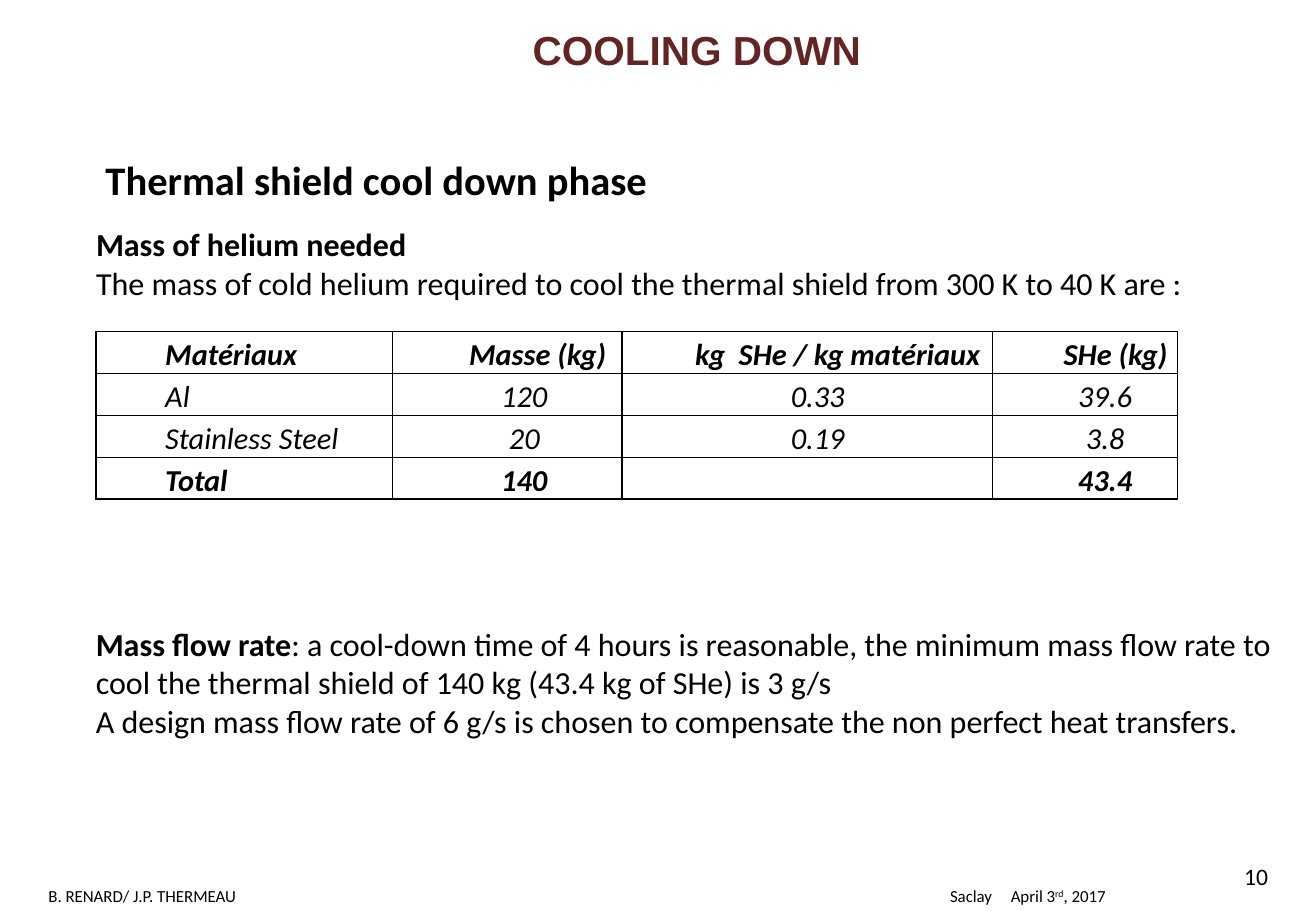
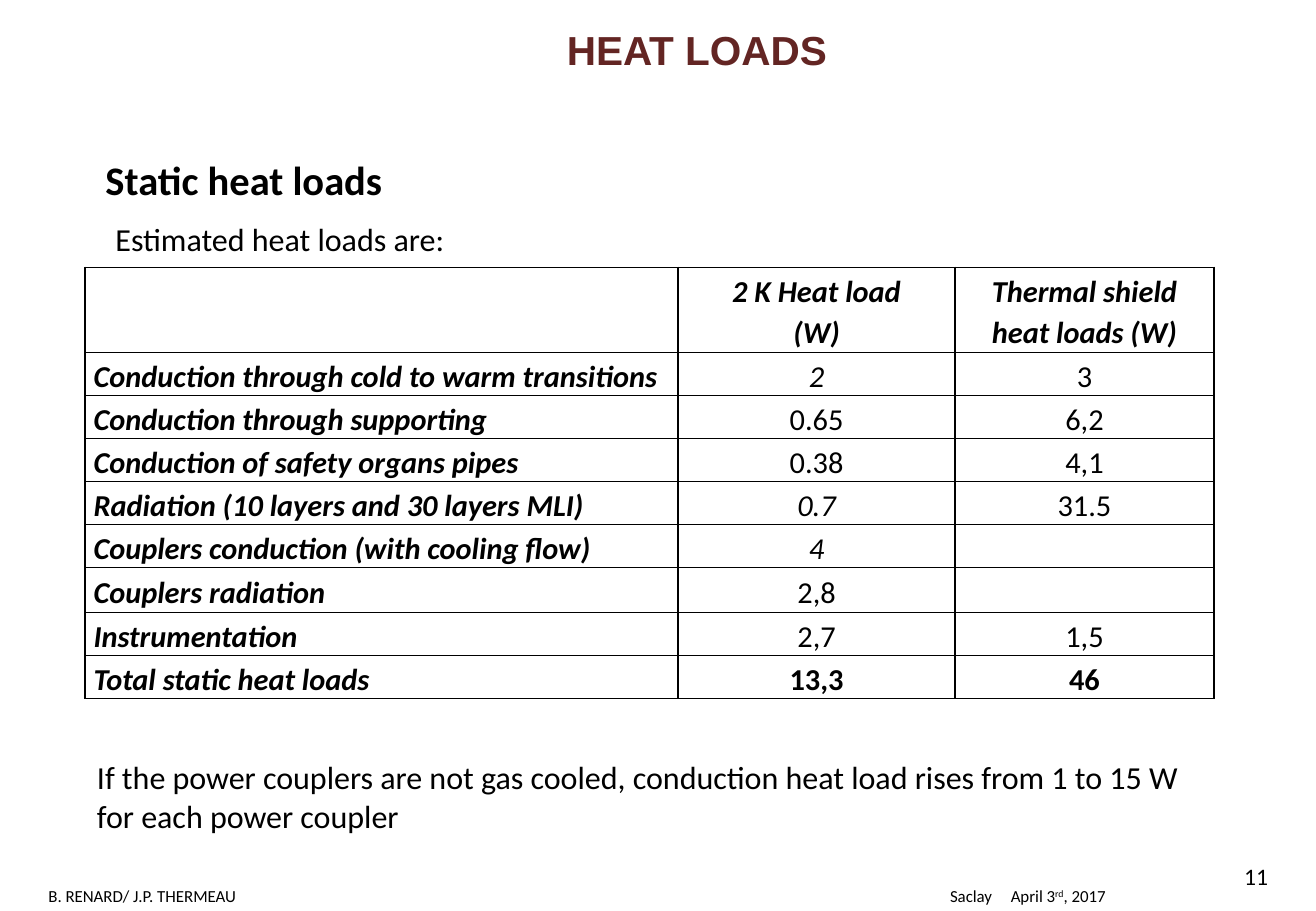
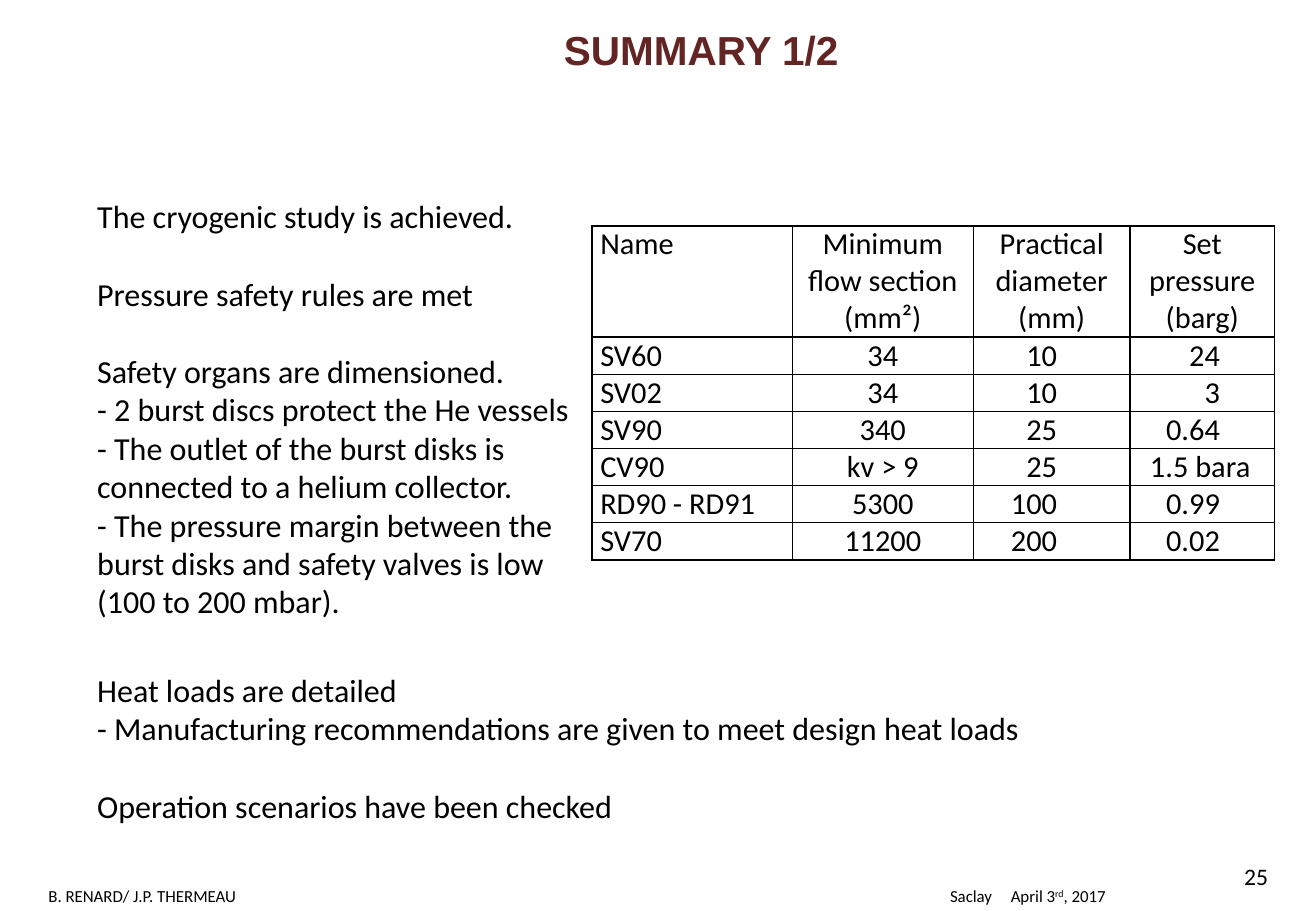
from dataclasses import dataclass
from typing import Any, Optional

from lxml import etree
from pptx import Presentation
from pptx.dml.color import RGBColor
from pptx.enum.text import MSO_ANCHOR, MSO_AUTO_SIZE, PP_ALIGN
from pptx.oxml.ns import qn
from pptx.util import Emu, Pt

LEFT, CENTER, RIGHT = PP_ALIGN.LEFT, PP_ALIGN.CENTER, PP_ALIGN.RIGHT
TOP, MIDDLE = MSO_ANCHOR.TOP, MSO_ANCHOR.MIDDLE
NO_AUTOFIT = MSO_AUTO_SIZE.NONE
EMU_PER_PX = 9144
TITLE_AND_CONTENT = 1


@dataclass(frozen=True)
class Theme:
    title_color: RGBColor = RGBColor(0x63, 0x25, 0x23)
    ink: RGBColor = RGBColor(0, 0, 0)
    panel: RGBColor = RGBColor(0xFF, 0xFF, 0xFF)
    border: str = "000000"
    border_points: int = 1
    title_font: str = "Arial"
    body_font: str = "Calibri"
    heading_size: int = 24
    body_size: int = 19
    table_size: int = 18
    number_size: int = 14
    footer_size: int = 10
    blank_line: int = 23
    table_spacing: float = 1.13


THEME = Theme()


@dataclass(frozen=True)
class Box:
    left: int
    top: int
    width: int
    height: int


@dataclass(frozen=True)
class Span:
    text: str
    bold: bool = False
    italic: bool = False
    raised: bool = False


@dataclass(frozen=True)
class Para:
    spans: tuple[Span, ...]
    gap: int = 0
    align: Any = LEFT
    line_spacing: Optional[float] = None
    tabs: tuple[int, ...] = ()


@dataclass(frozen=True)
class Block:
    box: Box
    paras: tuple[Para, ...]
    size: int = THEME.body_size
    margin_left: int = 10
    filled: bool = False


@dataclass(frozen=True)
class Cell:
    text: str
    bold: bool = False
    italic: bool = False
    align: Any = LEFT
    anchor: Any = TOP
    margin_left: int = 7
    margin_right: int = 7
    margin_top: int = 0


@dataclass(frozen=True)
class Grid:
    left: int
    top: int
    columns: tuple[int, ...]
    heights: tuple[int, ...]
    cells: list[list[Cell]]
    line_spacing: Optional[float] = None


@dataclass(frozen=True)
class Page:
    number: int
    title: str
    body: Block
    blocks: tuple[Block, ...]
    grid: Grid
    title_box: Box = Box(227, 0, 693, 81)


FOOTER = Block(
    Box(30, 724, 940, 26),
    (Para((Span("B. RENARD/ J.P. THERMEAU\tSaclay\tApril 3"),
           Span("rd", raised=True), Span(", 2017")), tabs=(742, 792)),),
    THEME.footer_size,
)


def px(length: int) -> Emu:
    return Emu(length * EMU_PER_PX)


def apply(target: Any, values: dict[str, Any]) -> None:
    for name, value in values.items():
        setattr(target, name, value)


def line(text: str, bold: bool = False, gap: int = 0) -> Para:
    return Para((Span(text, bold),), gap)


def heading(text: str) -> Block:
    return Block(Box(77, 123, 874, 50), (line(text, True),), THEME.heading_size)


def place(shape: Any, box: Box) -> None:
    apply(shape, {"left": px(box.left), "top": px(box.top),
                  "width": px(box.width), "height": px(box.height)})


def write(frame: Any, paras: tuple[Para, ...], size: int,
          font: str = THEME.body_font, color: RGBColor = THEME.ink) -> None:
    for index, para in enumerate(paras):
        target = frame.paragraphs[0] if index == 0 else frame.add_paragraph()
        properties = target._p.get_or_add_pPr()
        apply(target, {"alignment": para.align, "space_before": Pt(para.gap),
                       "space_after": Pt(0), "line_spacing": para.line_spacing})
        if para.tabs:
            stops = etree.SubElement(properties, qn("a:tabLst"))
            for stop in para.tabs:
                etree.SubElement(stops, qn("a:tab"), pos=str(px(stop)), algn="l")
        else:
            properties.set("marL", "0")
            properties.set("indent", "0")
            etree.SubElement(properties, qn("a:buNone"))
        for span in para.spans:
            run = target.add_run()
            run.text = span.text
            apply(run.font, {"name": font, "size": Pt(size),
                             "bold": span.bold, "italic": span.italic})
            run.font.color.rgb = color
            if span.raised:
                run._r.get_or_add_rPr().set("baseline", "30000")


def fill_block(shape: Any, block: Block) -> None:
    place(shape, block.box)
    if block.filled:
        shape.fill.solid()
        shape.fill.fore_color.rgb = THEME.panel
    apply(shape.text_frame, {
        "word_wrap": True, "auto_size": NO_AUTOFIT, "vertical_anchor": TOP,
        "margin_left": px(block.margin_left), "margin_right": px(10),
        "margin_top": px(5), "margin_bottom": px(5)})
    write(shape.text_frame, block.paras, block.size)


def add_block(slide: Any, block: Block) -> None:
    fill_block(slide.shapes.add_textbox(0, 0, 0, 0), block)


def add_borders(cell: Any) -> None:
    properties = cell._tc.get_or_add_tcPr()
    for index, side in enumerate(("lnL", "lnR", "lnT", "lnB")):
        edge = etree.Element(qn(f"a:{side}"), w=str(Pt(THEME.border_points)))
        fill = etree.SubElement(edge, qn("a:solidFill"))
        etree.SubElement(fill, qn("a:srgbClr"), val=THEME.border)
        properties.insert(index, edge)


def add_grid(slide: Any, grid: Grid) -> None:
    table = slide.shapes.add_table(
        len(grid.heights), len(grid.columns), px(grid.left), px(grid.top),
        px(sum(grid.columns)), px(sum(grid.heights))).table
    apply(table, {"first_row": False, "horz_banding": False})
    for column, width in zip(table.columns, grid.columns):
        column.width = px(width)
    for row, height, cells in zip(table.rows, grid.heights, grid.cells):
        row.height = px(height)
        for target, cell in zip(row.cells, cells):
            apply(target, {
                "vertical_anchor": cell.anchor,
                "margin_left": px(cell.margin_left),
                "margin_right": px(cell.margin_right),
                "margin_top": px(cell.margin_top), "margin_bottom": 0})
            target.fill.background()
            add_borders(target)
            paras = tuple(
                Para((Span(text, cell.bold, cell.italic),), align=cell.align,
                     line_spacing=grid.line_spacing)
                for text in cell.text.split("\n"))
            write(target.text_frame, paras, THEME.table_size)


def helium_grid() -> Grid:
    rows = (
        ("Matériaux", "Masse (kg)", "kg  SHe / kg matériaux", "SHe (kg)"),
        ("Al", "120", "0.33", "39.6"),
        ("Stainless Steel", "20", "0.19", "3.8"),
        ("Total", "140", "", "43.4"),
    )
    value_margins = (7, 29, 40, 24)
    cells = [[Cell(text, bold=r in (0, len(rows) - 1), italic=True,
                   align=CENTER if c else LEFT, anchor=MIDDLE, margin_left=57,
                   margin_right=value_margins[c] if r else 7)
              for c, text in enumerate(row)] for r, row in enumerate(rows)]
    return Grid(79, 273, (244, 189, 305, 152), (34,) * len(rows), cells,
                THEME.table_spacing)


def heat_grid() -> Grid:
    rows = (
        ("", "2 K Heat load\n(W)", "Thermal shield heat loads (W)"),
        ("Conduction through cold to warm transitions", "2", "3"),
        ("Conduction through supporting", "0.65", "6,2"),
        ("Conduction of safety organs pipes", "0.38", "4,1"),
        ("Radiation (10 layers and 30 layers MLI)", "0.7", "31.5"),
        ("Couplers conduction (with cooling flow)", "4", ""),
        ("Couplers radiation", "2,8", ""),
        ("Instrumentation", "2,7", "1,5"),
        ("Total static heat loads", "13,3", "46"),
    )
    italic_values = ("2", "0.7", "4")
    cells = [[Cell(text, bold=c == 0 or r in (0, len(rows) - 1),
                   italic=c == 0 or r == 0 or text in italic_values,
                   align=CENTER if c else LEFT, anchor=MIDDLE if r else TOP,
                   margin_top=1)
              for c, text in enumerate(row)] for r, row in enumerate(rows)]
    heights = (70,) + (35,) * 5 + (37,) + (35,) * 2
    return Grid(70, 220, (488, 228, 213), heights, cells, THEME.table_spacing)


def valve_grid() -> Grid:
    rows = (
        ("Name", "Minimum flow section (mm²)", "Practical diameter (mm)",
         "Set pressure\n(barg)"),
        ("SV60", "34", "10", "24"),
        ("SV02", "34", "10", "3"),
        ("SV90", "340", "25", "0.64"),
        ("CV90", "kv > 9", "25", "1.5 bara"),
        ("RD90 - RD91", "5300", "100", "0.99"),
        ("SV70", "11200", "200", "0.02"),
    )
    value_aligns = (LEFT, CENTER, RIGHT, RIGHT)
    value_margins = (7, 7, 60, 45)
    cells = [[Cell(text, align=CENTER if c else LEFT)
              for c, text in enumerate(rows[0])]]
    for row in rows[1:]:
        cells.append([
            Cell(text, align=align,
                 margin_right=20 if text.endswith("bara") else margin)
            for text, align, margin in zip(row, value_aligns, value_margins)])
    return Grid(487, 186, (165, 149, 129, 119), (91,) + (30,) * 6, cells)


def build_pages() -> tuple[Page, ...]:
    blank = THEME.blank_line
    return (
        Page(
            10, "COOLING DOWN",
            Block(Box(69, 180, 945, 74), (
                line("Mass of helium needed", True),
                line("The mass of cold helium required to cool the thermal "
                     "shield from 300 K to 40 K are :"))),
            (heading("Thermal shield cool down phase"),
             Block(Box(69, 509, 991, 106), (
                 Para((Span("Mass flow rate", True),
                       Span(": a cool-down time of 4 hours is reasonable, the "
                            "minimum mass flow rate to cool the thermal shield "
                            "of 140 kg (43.4 kg of SHe) is 3 g/s"))),
                 line("A design mass flow rate of 6 g/s is chosen to compensate "
                      "the non perfect heat transfers.")))),
            helium_grid()),
        Page(
            11, "HEAT LOADS",
            Block(Box(85, 176, 945, 42), (line("Estimated heat loads are:"),)),
            (heading("Static heat loads"),
             Block(Box(70, 619, 937, 74), (
                 line("If the power couplers are not gas cooled, conduction heat "
                      "load rises from 1 to 15 W for each power coupler"),))),
            heat_grid()),
        Page(
            25, "SUMMARY 1/2",
            Block(Box(61, 157, 425, 362), (
                line("The cryogenic study is achieved."),
                line("Pressure safety rules are met", gap=blank),
                line("Safety organs are dimensioned.", gap=blank),
                line("- 2 burst discs protect the He vessels"),
                line("- The outlet of the burst disks is connected to a helium "
                     "collector."),
                line("- The pressure margin between the burst disks and safety "
                     "valves is low (100 to 200 mbar).")),
                margin_left=19, filled=True),
            (Block(Box(61, 547, 974, 138), (
                line("Heat loads are detailed"),
                line("- Manufacturing recommendations are given to meet design "
                     "heat loads"),
                line("Operation scenarios have been checked", gap=blank)),
                margin_left=19, filled=True),),
            valve_grid(), Box(195, 0, 764, 81)),
    )


def draw_page(deck: Any, page: Page) -> None:
    slide = deck.slides.add_slide(deck.slide_layouts[TITLE_AND_CONTENT])
    title = slide.shapes.title
    place(title, page.title_box)
    apply(title.text_frame, {"auto_size": NO_AUTOFIT, "vertical_anchor": MIDDLE})
    write(title.text_frame, (Para((Span(page.title, True),), align=CENTER),),
          THEME.heading_size, THEME.title_font, THEME.title_color)
    fill_block(slide.placeholders[1], page.body)
    number = Block(Box(1014, 705, 55, 34), (line(str(page.number)),),
                   THEME.number_size)
    for block in (*page.blocks, FOOTER, number):
        add_block(slide, block)
    add_grid(slide, page.grid)


def main() -> None:
    deck = Presentation()
    apply(deck, {"slide_width": px(1083), "slide_height": px(750)})
    for page in build_pages():
        draw_page(deck, page)
    deck.save("out.pptx")


if __name__ == "__main__":
    main()
